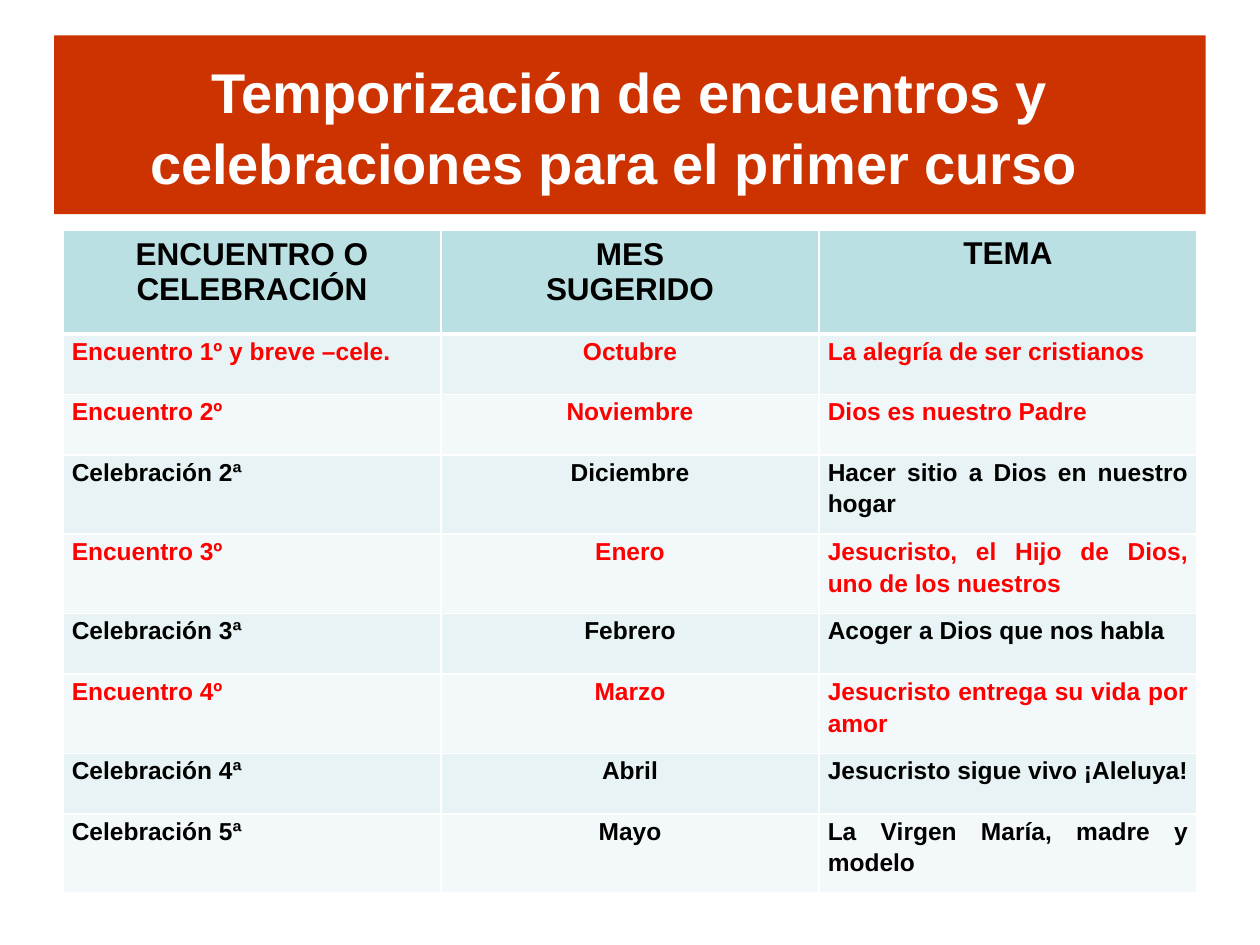
from pptx import Presentation
from pptx.dml.color import RGBColor
from pptx.enum.shapes import MSO_SHAPE
from pptx.enum.text import MSO_ANCHOR, PP_ALIGN as Align
from pptx.oxml import parse_xml
from pptx.oxml.ns import nsdecls
from pptx.util import Inches, Pt

# Content
TITLE = "Temporización de encuentros y celebraciones para el primer curso  "
HEADERS = ["ENCUENTRO O\nCELEBRACIÓN", "MES\nSUGERIDO", "TEMA"]
SESSIONS = [
    ("Encuentro 1º y breve –cele.", "Octubre", "La alegría de ser cristianos"),
    ("Encuentro 2º", "Noviembre", "Dios es nuestro Padre"),
    ("Celebración 2ª", "Diciembre", "Hacer sitio a Dios en nuestro hogar"),
    ("Encuentro 3º", "Enero", "Jesucristo, el Hijo de Dios, uno de los nuestros"),
    ("Celebración 3ª", "Febrero", "Acoger a Dios que nos habla"),
    ("Encuentro 4º", "Marzo", "Jesucristo entrega su vida por amor"),
    ("Celebración 4ª", "Abril", "Jesucristo sigue vivo ¡Aleluya!"),
    ("Celebración 5ª", "Mayo", "La Virgen María, madre y modelo"),
]

# Format
ROW_HEIGHTS = [0.82, 0.48, 0.48, 0.63, 0.63, 0.48, 0.63, 0.48, 0.63]
COLUMN_WIDTH = 3
COLUMN_ALIGN = [Align.JUSTIFY, Align.CENTER, Align.JUSTIFY]
HEADER_FILL, BAND_FILLS = "BBE0E3", ["E7F3F4", "F3F9FA"]
BLACK, RED, WHITE, ORANGE = "000000", "FF0000", "FFFFFF", "CC3300"
TIGHT = {"margin_left": Inches(0.07), "margin_right": Inches(0.07),
         "margin_top": 0, "margin_bottom": 0}


def rgb(value):
    return RGBColor.from_string(value)


def paint(part, color):
    part.fill.solid()
    part.fill.fore_color.rgb = rgb(color)


def write(frame, text, size, color, align, spacing):
    frame.word_wrap = True
    frame.text = text
    for paragraph in frame.paragraphs:
        paragraph.alignment = align
        paragraph.line_spacing = spacing
        font = paragraph.runs[0].font
        for name, value in {"name": "Arial", "size": Pt(size), "bold": True}.items():
            setattr(font, name, value)
        font.color.rgb = rgb(color)


def set_borders(cell, widths):
    properties = cell._tc.get_or_add_tcPr()
    for position, (side, width) in enumerate(widths.items()):
        properties.insert(position, parse_xml(
            f'<a:ln{side} {nsdecls("a")} w="{Pt(width)}"><a:solidFill>'
            f'<a:srgbClr val="{WHITE}"/></a:solidFill></a:ln{side}>'))


presentation = Presentation()
presentation.slide_width, presentation.slide_height = Inches(10), Inches(7.5)
slide = presentation.slides.add_slide(presentation.slide_layouts[6])

# Title band
band = slide.shapes.add_shape(
    MSO_SHAPE.RECTANGLE, Inches(0.43), Inches(0.28), Inches(9.14), Inches(1.42))
band.shadow.inherit = False
band.line.fill.background()
paint(band, ORANGE)
band.text_frame.vertical_anchor = MSO_ANCHOR.MIDDLE
write(band.text_frame, TITLE, 32, WHITE, Align.CENTER, 1.05)

# Schedule table
table = slide.shapes.add_table(
    len(ROW_HEIGHTS), len(HEADERS), Inches(0.5), Inches(1.83),
    Inches(COLUMN_WIDTH * len(HEADERS)), Inches(sum(ROW_HEIGHTS))).table
for column in table.columns:
    column.width = Inches(COLUMN_WIDTH)
for row, height in zip(table.rows, ROW_HEIGHTS):
    row.height = Inches(height)

for r, texts in enumerate([HEADERS, *SESSIONS]):
    is_header = r == 0
    fill = HEADER_FILL if is_header else BAND_FILLS[(r - 1) % 2]
    color = RED if texts[0].startswith("Encuentro") else BLACK
    for c, text in enumerate(texts):
        cell = table.cell(r, c)
        two_line_header = "\n" in text
        if not two_line_header:
            for name, value in TIGHT.items():
                setattr(cell, name, value)
        write(cell.text_frame, text, 18 if is_header else 14, color,
              Align.CENTER if is_header else COLUMN_ALIGN[c],
              1.0 if two_line_header else 1.15)
        paint(cell, fill)
        set_borders(cell, {"L": 1, "R": 1, "T": 3 if r == 1 else 1,
                           "B": 3 if is_header else 1})

presentation.save("out.pptx")
